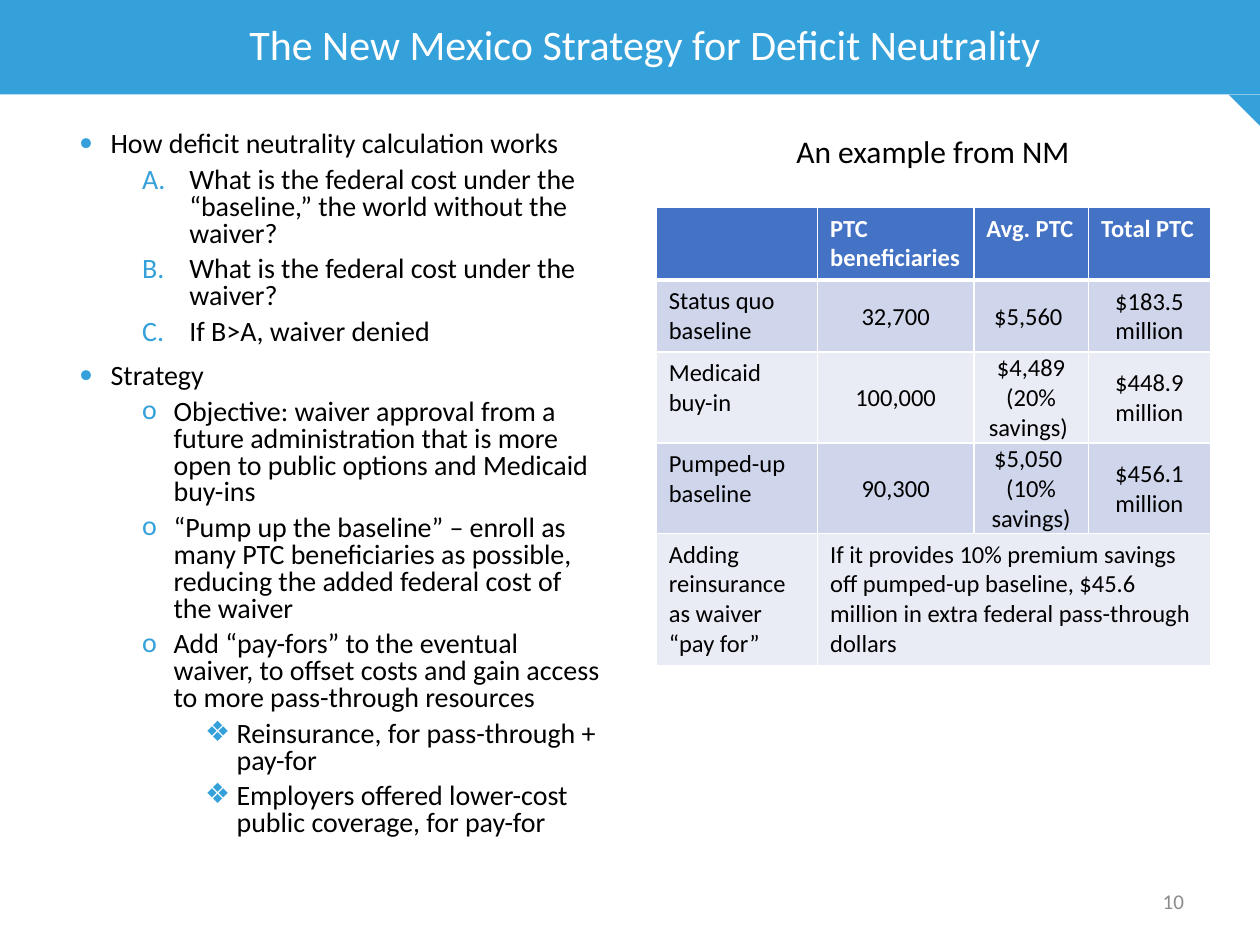
from dataclasses import dataclass

from lxml.etree import SubElement as Sub
from pptx import Presentation
from pptx.dml.color import RGBColor
from pptx.enum.shapes import MSO_SHAPE as Kind
from pptx.enum.text import MSO_ANCHOR as Anchor, MSO_AUTO_SIZE as Fit, PP_ALIGN as Align
from pptx.oxml.ns import qn
from pptx.util import Pt

BLUE, WHITE, BLACK, GREY = "34A1DA", "FFFFFF", "000000", "8C8C8C"
HEAD, DARK, PALE = "4472C4", "CFD5EA", "E9EBF5"
FACE = "Calibri"


@dataclass(frozen=True)
class Level:
    depth: int
    left: float
    hang: float
    gap: float
    tag: str
    key: str
    mark: str


@dataclass(frozen=True)
class Item:
    level: Level
    text: str


@dataclass(frozen=True)
class Box:
    left: float
    top: float
    width: float
    height: float

    def sides(self) -> list:
        return [Pt(n) for n in (self.left, self.top, self.width, self.height)]


POINT = Level(0, 18, 18, 10, "a:buChar", "char", "•")
LETTER = Level(1, 63, 27, 5, "a:buAutoNum", "type", "alphaUcPeriod")
RING = Level(1, 54, 18, 5, "a:buChar", "char", "o")
GEM = Level(2, 90, 18, 5, "a:buChar", "char", "❖")

ITEMS = [
    Item(POINT, "How deficit neutrality calculation works"),
    Item(LETTER, "What is the federal cost under the “baseline,” the world without the waiver?"),
    Item(LETTER, "What is the federal cost under the waiver?"),
    Item(LETTER, "If B>A, waiver denied"),
    Item(POINT, "Strategy"),
    Item(RING, "Objective: waiver approval from a future administration that is more open to "
               "public options and Medicaid buy-ins"),
    Item(RING, "“Pump up the baseline” – enroll as many PTC beneficiaries as possible, "
               "reducing the added federal cost of the waiver"),
    Item(RING, "Add “pay-fors” to the eventual waiver, to offset costs and gain access to "
               "more pass-through resources"),
    Item(GEM, "Reinsurance, for pass-through + pay-for"),
    Item(GEM, "Employers offered lower-cost public coverage, for pay-for"),
]

ROWS = [
    ["", "PTC beneficiaries", "Avg. PTC", "Total PTC"],
    ["Status quo baseline", "32,700", "$5,560 ", "$183.5 million"],
    ["Medicaid buy-in", "100,000", "$4,489 (20% savings) ", "$448.9 million"],
    ["Pumped-up baseline", "90,300", "$5,050 \n(10% savings)", "$456.1 million"],
    ["Adding reinsurance as waiver “pay for”",
     "If it provides 10% premium savings off pumped-up baseline, $45.6 million in extra "
     "federal pass-through dollars"],
]
COLS = [92.2, 89.3, 65.5, 69.8]


def tint(code: str) -> RGBColor:
    return RGBColor.from_string(code)


def apply(thing, looks: dict) -> None:
    for name, value in looks.items():
        setattr(thing, name, value)


def write(para, text: str, size: float, code: str, bold: bool = False) -> None:
    run = para.add_run()
    run.text = text
    apply(run.font, {"name": FACE, "size": Pt(size), "bold": bold})
    run.font.color.rgb = tint(code)


def indent(para, left: float, hang: float):
    props = para._p.get_or_add_pPr()
    props.set("marL", str(Pt(left)))
    props.set("indent", str(-Pt(hang)))
    return props


def bullet(para, level: Level) -> None:
    props = indent(para, level.left, level.hang)
    Sub(Sub(props, qn("a:buClr")), qn("a:srgbClr")).set("val", BLUE)
    Sub(props, qn("a:buFont")).set("typeface", FACE)
    Sub(props, qn(level.tag)).set(level.key, level.mark)


def block(slide, kind, box: Box, turn: float = 0) -> None:
    shape = slide.shapes.add_shape(kind, *box.sides())
    shape.rotation = turn
    shape.shadow.inherit = False
    shape.fill.solid()
    shape.fill.fore_color.rgb = tint(BLUE)
    shape.line.fill.background()


def place(shape, box: Box) -> None:
    apply(shape, dict(zip(("left", "top", "width", "height"), box.sides())))


def label(slide, box: Box, text: str, size: float, code: str, looks: dict, align=None) -> None:
    frame = slide.shapes.add_textbox(*box.sides()).text_frame
    apply(frame, looks)
    para = frame.paragraphs[0]
    para.alignment = align
    write(para, text, size, code)


def heading(slide, box: Box, text: str) -> None:
    title = slide.shapes.title
    place(title, box)
    frame = title.text_frame
    apply(frame, {"vertical_anchor": Anchor.MIDDLE, "auto_size": Fit.NONE})
    para = frame.paragraphs[0]
    indent(para, 18, 0)
    apply(para, {"alignment": Align.CENTER, "line_spacing": 0.9, "space_before": Pt(0)})
    write(para, text, 24, WHITE)


def outline(slide, box: Box, items: list[Item]) -> None:
    body = slide.placeholders[1]
    place(body, box)
    frame = body.text_frame
    frame.auto_size = Fit.NONE
    for n, item in enumerate(items):
        para = frame.add_paragraph() if n else frame.paragraphs[0]
        bullet(para, item.level)
        gap = item.level.gap if n else 0
        apply(para, {"level": item.level.depth, "line_spacing": 0.8, "space_before": Pt(gap)})
        write(para, item.text, 16, BLACK)


def border(cell, widths: dict[str, float]) -> None:
    props = cell._tc.get_or_add_tcPr()
    for side, width in widths.items():
        line = Sub(props, qn(f"a:ln{side}"), w=str(Pt(width)))
        Sub(Sub(line, qn("a:solidFill")), qn("a:srgbClr")).set("val", WHITE)


def grid(slide, box: Box, rows: list[list[str]]) -> None:
    holder = slide.shapes.add_table(len(rows), len(COLS), *box.sides())
    table = holder.table
    for col, width in zip(table.columns, COLS):
        col.width = Pt(width)
    last = len(rows) - 1
    for r, row in enumerate(table.rows):
        row.height = Pt(29.5)
        fill = (DARK if r % 2 else PALE) if r else HEAD
        for c, cell in enumerate(row.cells):
            border(cell, {"L": 1, "R": 1, "T": 3 if r == 1 else 1, "B": 1 if r else 3})
            cell.fill.solid()
            cell.fill.fore_color.rgb = tint(fill)
            data = 0 < r < last and c > 0
            if data:
                apply(cell, {"vertical_anchor": Anchor.MIDDLE, "margin_left": Pt(0.72),
                             "margin_right": Pt(0.72), "margin_top": Pt(0.72),
                             "margin_bottom": Pt(0)})
            if c >= len(rows[r]) or not rows[r][c]:
                continue
            for n, text in enumerate(rows[r][c].split("\n")):
                para = cell.text_frame.add_paragraph() if n else cell.text_frame.paragraphs[0]
                para.alignment = Align.CENTER if data else None
                write(para, text, 14, BLACK if r else WHITE, r == 0)
    table.cell(last, 1).merge(table.cell(last, len(COLS) - 1))
    holder.height = Pt(box.height)


def main() -> None:
    deck = Presentation()
    apply(deck, {"slide_width": Pt(720), "slide_height": Pt(540)})
    slide = deck.slides.add_slide(deck.slide_layouts[1])
    block(slide, Kind.RECTANGLE, Box(0, 0, 720, 54))
    block(slide, Kind.RIGHT_TRIANGLE, Box(702, 54, 18, 18), 180)
    outline(slide, Box(38, 72, 312.5, 428.5), ITEMS)
    grid(slide, Box(375, 118.6, sum(COLS), 258.5), ROWS)
    label(slide, Box(650, 500.5, 41, 29), "10", 12, GREY,
          {"word_wrap": True, "vertical_anchor": Anchor.MIDDLE}, Align.CENTER)
    heading(slide, Box(38, 0, 643, 54), "The New Mexico Strategy for Deficit Neutrality")
    label(slide, Box(448, 72, 172, 29), "An example from NM", 18, BLACK,
          {"word_wrap": False, "auto_size": Fit.SHAPE_TO_FIT_TEXT})
    tree = slide.shapes._spTree
    tree.append(slide.shapes.title._element)
    deck.save("out.pptx")


if __name__ == "__main__":
    main()
